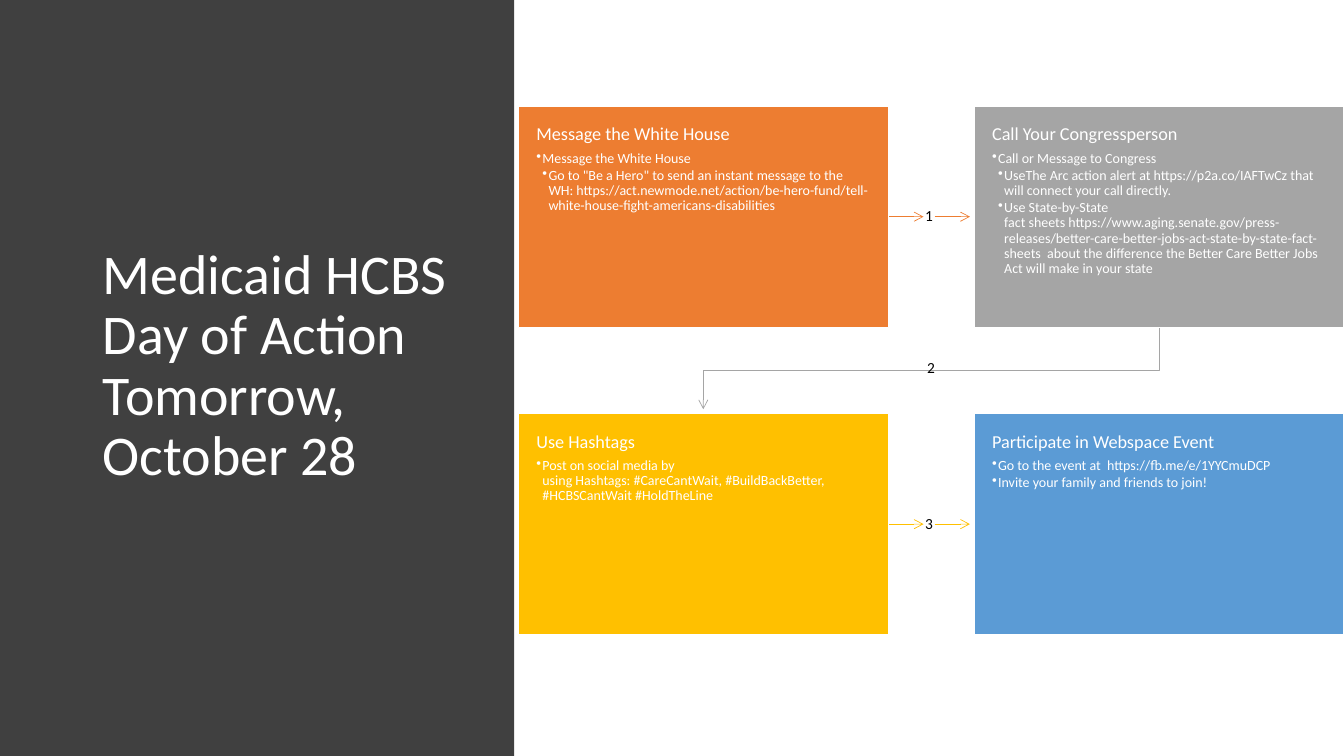
from dataclasses import dataclass

from lxml.etree import SubElement
from pptx import Presentation
from pptx.dml.color import RGBColor as RGB
from pptx.enum.shapes import MSO_SHAPE as SHAPE
from pptx.enum.text import MSO_ANCHOR as ANCHOR, MSO_AUTO_SIZE as AUTO_SIZE, PP_ALIGN as ALIGN
from pptx.oxml.ns import qn
from pptx.util import Inches, Pt


@dataclass(frozen=True)
class Theme:
    font: str = "Calibri"
    panel: str = "404040"
    light: str = "FFFFFF"
    dark: str = "000000"
    orange: str = "ED7D31"
    gray: str = "A5A5A5"
    gold: str = "FFC000"
    blue: str = "5B9BD5"
    title: int = 40
    heading: int = 13
    item: int = 10
    step: int = 11


T = Theme()
SLIDE_W, SLIDE_H = 13.33, 7.5
PANEL_W = 5.1
GRID_X, GRID_Y = 5.14, 1.05
PITCH_X, PITCH_Y = 4.52, 3.05
CARD_W, CARD_H = 3.67, 2.2
GAP_Y = PITCH_Y - CARD_H
ARROW_END = 0.04
STEP_H = 0.18
TIE, HARD_SPACE = "~", chr(160)

CARDS = [
    (T.orange, "Message the White House", [
        (1, "Message the White House"),
        (2, 'Go to "Be a Hero" to send an instant message to the WH:~https://act.newmode.net/action/be-hero-fund/tell-white-house-fight-americans-disabilities~'),
    ]),
    (T.gray, "Call Your Congressperson", [
        (1, "Call or Message to Congress"),
        (2, "UseThe~Arc~action~alert~at~https://p2a.co/IAFTwCz~that will connect your~call directly."),
        (2, "Use State-by-State fact~sheets~https://www.aging.senate.gov/press-releases/better-care-better-jobs-act-state-by-state-fact-sheets~~about the difference the Better Care~Better Jobs Act will make in your state"),
    ]),
    (T.gold, "Use Hashtags", [
        (1, "Post on social media by using~Hashtags:~#CareCantWait,~#BuildBackBetter, #HCBSCantWait~#HoldTheLine"),
    ]),
    (T.blue, "Participate in Webspace Event", [
        (1, "Go to the event at~~https://fb.me/e/1YYCmuDCP~"),
        (1, "Invite your family and friends to~join!~"),
    ]),
]


def col(i):
    return GRID_X + i * PITCH_X


def row(j):
    return GRID_Y + j * PITCH_Y


def place(sp, x, y, w, h):
    sp.left, sp.top, sp.width, sp.height = map(Inches, (x, y, w, h))


def set_insets(tf, x, y):
    tf.margin_left = tf.margin_right = Inches(x)
    tf.margin_top = tf.margin_bottom = Inches(y)


def format_text(p, size, color, after=0):
    p.line_spacing = 0.9
    p.space_before = Pt(0)
    p.space_after = Pt(after)
    for r in p.runs:
        r.font.name = T.font
        r.font.size = Pt(size)
        r.font.bold = False
        r.font.color.rgb = RGB.from_string(color)


def set_bullet(p, level):
    pPr = p._p.get_or_add_pPr()
    pPr.set("marL", str(Inches(0.06 * level)))
    pPr.set("indent", str(Inches(-0.06 if level else 0)))
    if level:
        SubElement(pPr, qn("a:buFontTx"))
        SubElement(pPr, qn("a:buChar")).set("char", "•")
    else:
        SubElement(pPr, qn("a:buNone"))
    p.level = level


def add_panel(s):
    sp = s.shapes.add_shape(SHAPE.RECTANGLE, 0, 0, Inches(PANEL_W), Inches(SLIDE_H))
    sp.shadow.inherit = False
    sp.fill.solid()
    sp.fill.fore_color.rgb = RGB.from_string(T.panel)
    sp.line.fill.background()
    s.shapes._spTree.insert(2, sp._element)


def fill_title(sp, lines):
    place(sp, 0.92, 0.68, 3.67, 5.92)
    tf = sp.text_frame
    tf.word_wrap = True
    tf.auto_size = AUTO_SIZE.NONE
    tf.vertical_anchor = ANCHOR.MIDDLE
    p = tf.paragraphs[0]
    p.alignment = ALIGN.LEFT
    for i, line in enumerate(lines):
        if i:
            p.add_line_break()
        p.add_run().text = line
    format_text(p, T.title, T.light)


def fill_card(sp, i, j, color, heading, items):
    place(sp, col(i), row(j), CARD_W, CARD_H)
    sp.fill.solid()
    sp.fill.fore_color.rgb = RGB.from_string(color)
    sp.line.color.rgb = RGB.from_string(T.light)
    sp.line.width = Pt(1)
    tf = sp.text_frame
    tf.word_wrap = True
    tf.auto_size = AUTO_SIZE.NONE
    tf.vertical_anchor = ANCHOR.TOP
    set_insets(tf, 0.18, 0.19)
    for n, (level, text) in enumerate([(0, heading), *items]):
        p = tf.add_paragraph() if n else tf.paragraphs[0]
        p.text = text.replace(TIE, HARD_SPACE)
        set_bullet(p, level)
        if level:
            format_text(p, T.item, T.light, after=1.5)
        else:
            format_text(p, T.heading, T.light, after=4.5)


def add_arrow(s, color, *strokes):
    strokes = [[tuple(map(Inches, point)) for point in stroke] for stroke in strokes]
    builder = s.shapes.build_freeform(*strokes[0][0])
    for n, (start, *rest) in enumerate(strokes):
        if n:
            builder.move_to(*start)
        builder.add_line_segments(rest, close=False)
    sp = builder.convert_to_shape()
    sp.shadow.inherit = False
    sp.fill.background()
    sp.line.color.rgb = RGB.from_string(color)
    sp.line.width = Pt(0.5)
    SubElement(sp.line._get_or_add_ln(), qn("a:tailEnd")).set("type", "arrow")
    s.shapes._spTree.insert(3, sp._element)


def add_step(s, number, x, y, w):
    sp = s.shapes.add_textbox(*map(Inches, (x - w / 2, y - STEP_H / 2, w, STEP_H)))
    tf = sp.text_frame
    tf.word_wrap = True
    tf.vertical_anchor = ANCHOR.MIDDLE
    set_insets(tf, 0.01, 0)
    p = tf.paragraphs[0]
    p.text = str(number)
    p.alignment = ALIGN.CENTER
    format_text(p, T.step, T.dark)


def add_row_arrow(s, j, number, color):
    start, end = col(0) + CARD_W, col(1) - ARROW_END
    mid, y, w = (start + end) / 2, row(j) + CARD_H / 2, 0.11
    add_arrow(s, color, [(start, y), (mid - w / 2, y)], [(mid + w / 2, y), (end, y)])
    add_step(s, number, mid, y, w)


def add_return_arrow(s, number, color):
    right, left = (col(i) + CARD_W / 2 for i in (1, 0))
    top, bottom = row(0) + CARD_H, row(1) - ARROW_END
    mid = top + GAP_Y / 2
    add_arrow(s, color, [(right, top), (right, mid), (left, mid), (left, bottom)])
    add_step(s, number, (left + right) / 2, mid - 0.02, 0.23)


def main():
    prs = Presentation()
    prs.slide_width, prs.slide_height = Inches(SLIDE_W), Inches(SLIDE_H)
    s = prs.slides.add_slide(prs.slide_layouts.get_by_name("Comparison"))
    title, *bodies = s.placeholders
    add_panel(s)
    fill_title(title, ["Medicaid HCBS Day of Action ", "Tomorrow, October 28"])
    for n, (sp, card) in enumerate(zip(bodies, CARDS)):
        fill_card(sp, n % 2, n // 2, *card)
    add_row_arrow(s, 0, 1, T.orange)
    add_return_arrow(s, 2, T.gray)
    add_row_arrow(s, 1, 3, T.gold)
    prs.save("out.pptx")


if __name__ == "__main__":
    main()
